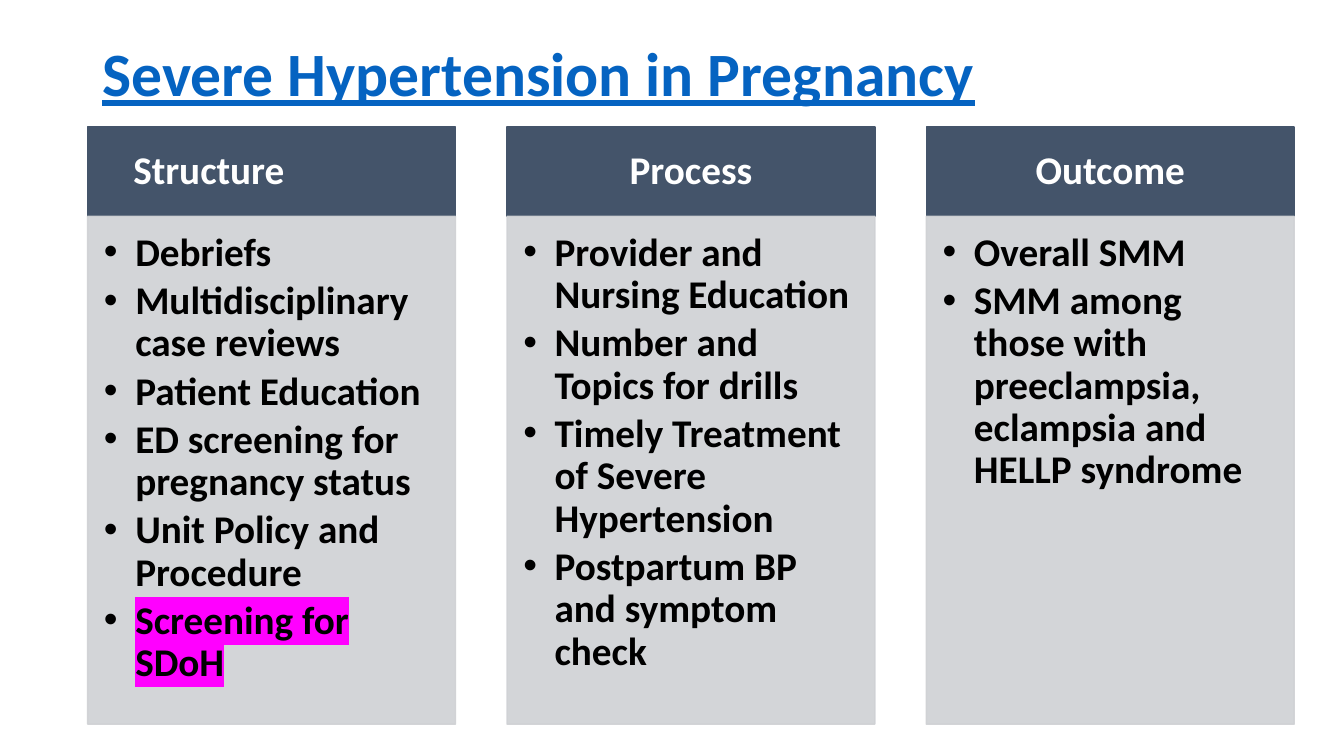
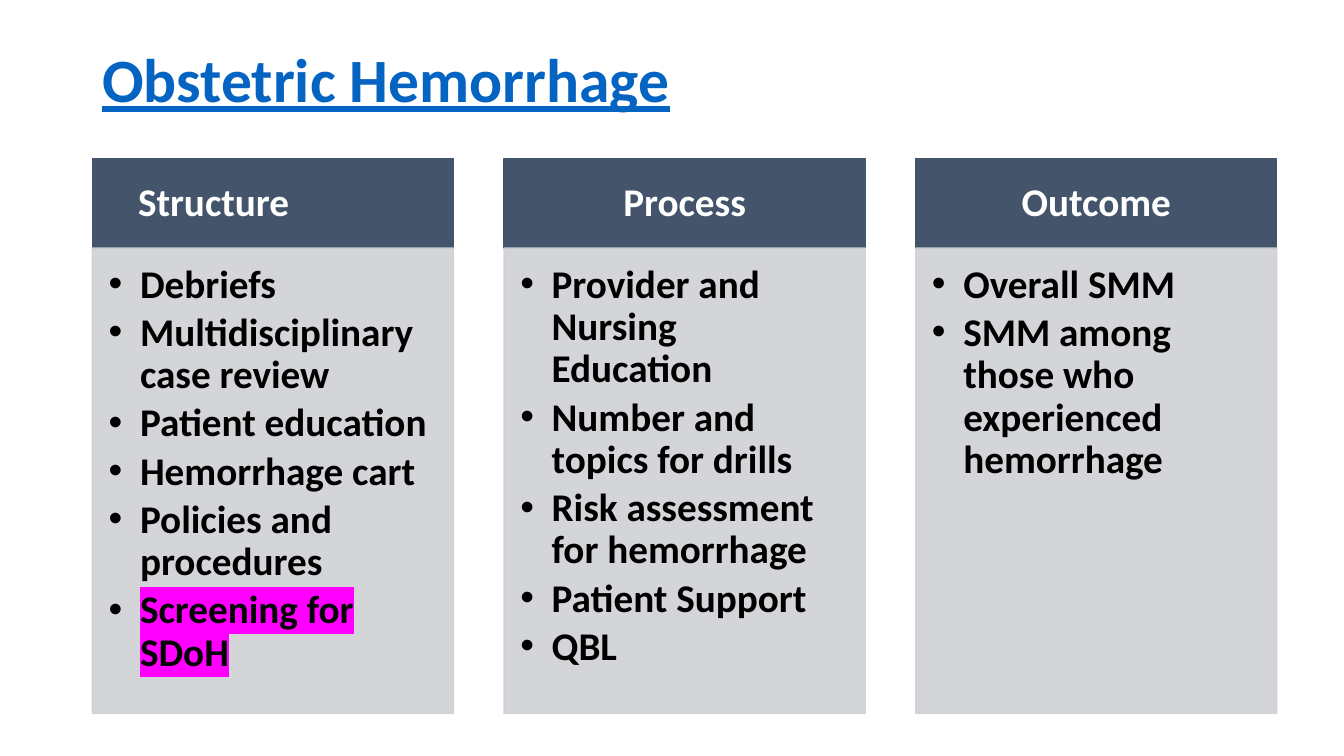
from dataclasses import dataclass

from lxml import etree
from pptx import Presentation
from pptx.dml.color import RGBColor
from pptx.enum.shapes import MSO_SHAPE
from pptx.enum.text import MSO_ANCHOR, PP_ALIGN
from pptx.oxml.ns import qn
from pptx.util import Cm, Pt

RECTANGLE = MSO_SHAPE.RECTANGLE
TOP, MIDDLE = MSO_ANCHOR.TOP, MSO_ANCHOR.MIDDLE
LEFT, CENTER = PP_ALIGN.LEFT, PP_ALIGN.CENTER

COLORS = {
    "title": "0563C1",
    "header": "44546A",
    "body": "CFD1D4",
    "light": "FFFFFF",
    "dark": "000000",
    "highlight": "FF00FF",
}
FONT = "Calibri"
BODY_OPACITY = 90
HEADER_HEIGHT = 2.25
PITCH_RATIO = 1.14  # column pitch relative to column width
BULLET_INDENT = 0.79
HIGHLIGHTED = "Screening for SDoH"

# Insets in cm: left, top, right, bottom
TITLE_INSETS = (0.25, 0.13, 0.25, 0.13)
HEADER_INSETS = (0.56, 0.3, 0.56, 0.3)
LEFT_HEADER_INSETS = (1.15, 0.3, 0.56, 0.3)
BODY_INSETS = (0.41, 0.41, 0.56, 0.6)


@dataclass(frozen=True)
class Column:
    heading: str
    items: tuple[str, ...]
    heading_align: PP_ALIGN = CENTER


@dataclass(frozen=True)
class MeasurePage:
    """Content of one slide; lengths in cm."""
    title: str
    title_top: float
    left: float
    top: float
    column_width: float
    body_height: float
    columns: tuple[Column, ...]


PAGES = (
    MeasurePage(
        "Severe Hypertension in Pregnancy", 0.1, 2.21, 3.2, 9.27, 12.8,
        (
            Column("Structure", (
                "Debriefs",
                "Multidisciplinary case reviews",
                "Patient Education",
                "ED screening for pregnancy status",
                "Unit Policy and Procedure",
                HIGHLIGHTED,
            ), LEFT),
            Column("Process", (
                "Provider and Nursing Education",
                "Number and Topics for drills",
                "Timely Treatment of Severe Hypertension",
                "Postpartum BP and symptom check",
            )),
            Column("Outcome", (
                "Overall SMM",
                "SMM among those with preeclampsia, eclampsia and HELLP syndrome",
            )),
        ),
    ),
    MeasurePage(
        "Obstetric Hemorrhage", 0.25, 2.33, 4, 9.1, 11.73,
        (
            Column("Structure", (
                "Debriefs",
                "Multidisciplinary case review",
                "Patient education",
                "Hemorrhage cart",
                "Policies and procedures",
                HIGHLIGHTED,
            ), LEFT),
            Column("Process", (
                "Provider and Nursing Education",
                "Number and topics for drills",
                "Risk assessment for hemorrhage",
                "Patient Support",
                "QBL",
            )),
            Column("Outcome", (
                "Overall SMM",
                "SMM among those who experienced hemorrhage",
            )),
        ),
    ),
)


def add_panel(page, left: float, top: float, width: float, height: float,
              color: str, opacity: int = 100):
    """Draw a rectangle whose outline matches its fill."""
    panel = page.shapes.add_shape(
        RECTANGLE, Cm(left), Cm(top), Cm(width), Cm(height))
    panel.shadow.inherit = False
    panel.line.width = Pt(1)
    for fill in (panel.fill, panel.line.fill):
        fill.solid()
        fill.fore_color.rgb = RGBColor.from_string(COLORS[color])
    if opacity < 100:
        for tint in panel._element.spPr.iter(qn("a:srgbClr")):
            etree.SubElement(tint, qn("a:alpha"), val=str(opacity * 1000))
    return panel


def add_bullet(para) -> None:
    """Give a paragraph a hanging bullet."""
    properties = para._p.get_or_add_pPr()
    properties.set("marL", str(Cm(BULLET_INDENT)))
    properties.set("indent", str(-Cm(BULLET_INDENT)))
    etree.SubElement(properties, qn("a:buFont"), typeface="Arial")
    etree.SubElement(properties, qn("a:buChar"), char="•")


def highlight(span) -> None:
    """Mark a run; the highlight must follow its text fill."""
    marker = etree.Element(qn("a:highlight"))
    etree.SubElement(marker, qn("a:srgbClr"), val=COLORS["highlight"])
    span._r.rPr.find(qn("a:solidFill")).addnext(marker)


def write_text(box, *lines: str, color: str, insets: tuple[float, ...],
               size: float = 28, align: PP_ALIGN = LEFT,
               anchor: MSO_ANCHOR = MIDDLE, underline: bool = False,
               bullets: bool = False, space_after: float = 0) -> None:
    """Fill a box with bold paragraphs, one per line."""
    frame = box.text_frame
    frame.word_wrap = True
    frame.vertical_anchor = anchor
    (frame.margin_left, frame.margin_top,
     frame.margin_right, frame.margin_bottom) = map(Cm, insets)
    for index, line in enumerate(lines):
        para = frame.add_paragraph() if index else frame.paragraphs[0]
        para.alignment = align
        para.line_spacing = 0.9
        para.space_after = Pt(space_after)
        if bullets:
            add_bullet(para)
        span = para.add_run()
        span.text = line
        font = span.font
        font.name, font.size, font.bold = FONT, Pt(size), True
        font.underline = underline
        font.color.rgb = RGBColor.from_string(COLORS[color])
        if line == HIGHLIGHTED:
            highlight(span)


def draw_column(page, column: Column, left: float, content: MeasurePage) -> None:
    """Draw a header band with its bulleted body below."""
    header = add_panel(page, left, content.top, content.column_width,
                       HEADER_HEIGHT, "header")
    insets = LEFT_HEADER_INSETS if column.heading_align == LEFT else HEADER_INSETS
    write_text(header, column.heading, color="light", insets=insets,
               align=column.heading_align)
    body = add_panel(page, left, content.top + HEADER_HEIGHT,
                     content.column_width, content.body_height,
                     "body", BODY_OPACITY)
    write_text(body, *column.items, color="dark", insets=BODY_INSETS,
               anchor=TOP, bullets=True, space_after=4.2)


def draw_page(deck, content: MeasurePage) -> None:
    """Add a slide with a title and evenly spaced columns."""
    page = deck.slides.add_slide(deck.slide_layouts[6])
    title = page.shapes.add_textbox(
        Cm(2.33), Cm(content.title_top), Cm(29.21), Cm(3.68))
    write_text(title, content.title, color="title", insets=TITLE_INSETS,
               size=44, underline=True)
    pitch = content.column_width * PITCH_RATIO
    for index, column in enumerate(content.columns):
        draw_column(page, column, content.left + index * pitch, content)


def main() -> None:
    deck = Presentation()
    deck.slide_width, deck.slide_height = Cm(33.87), Cm(19.05)
    for content in PAGES:
        draw_page(deck, content)
    deck.save("out.pptx")


if __name__ == "__main__":
    main()
